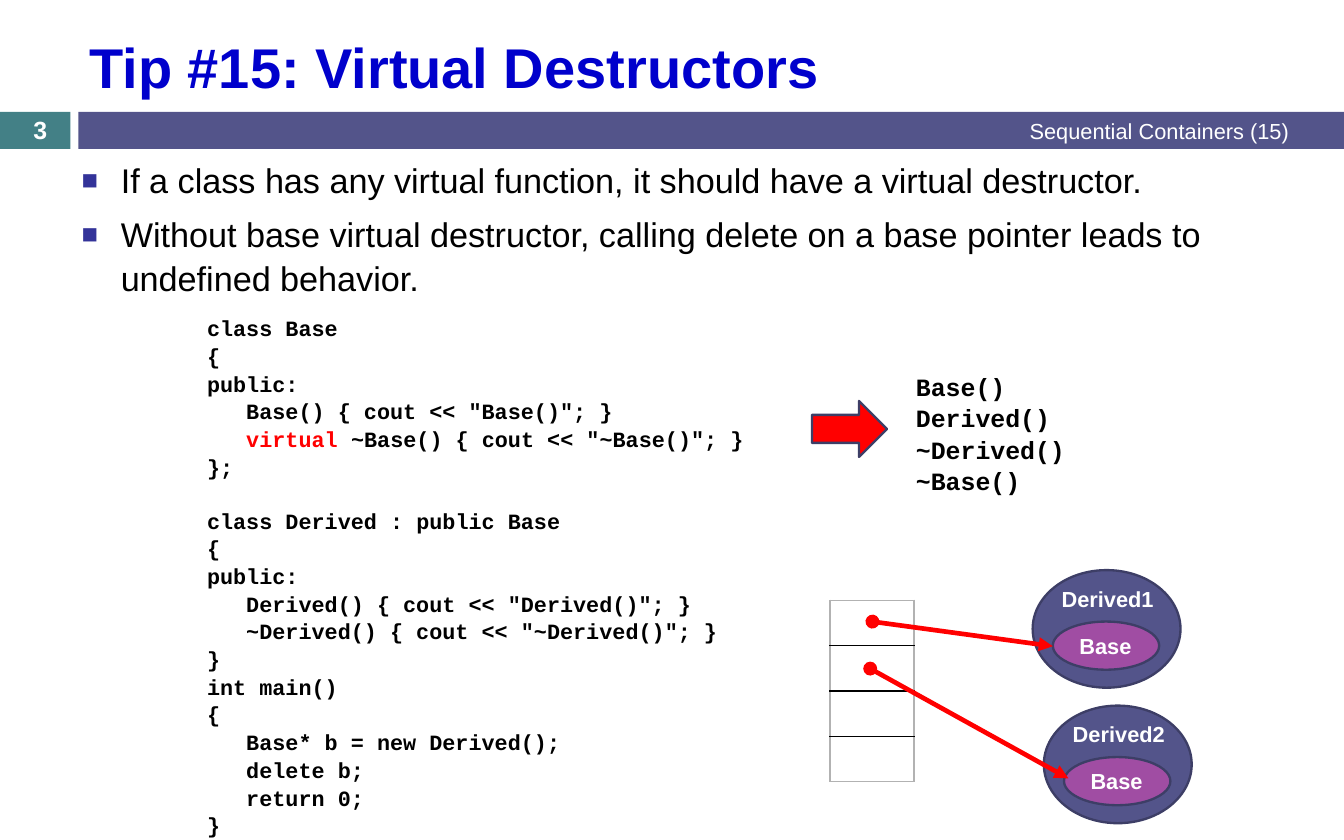
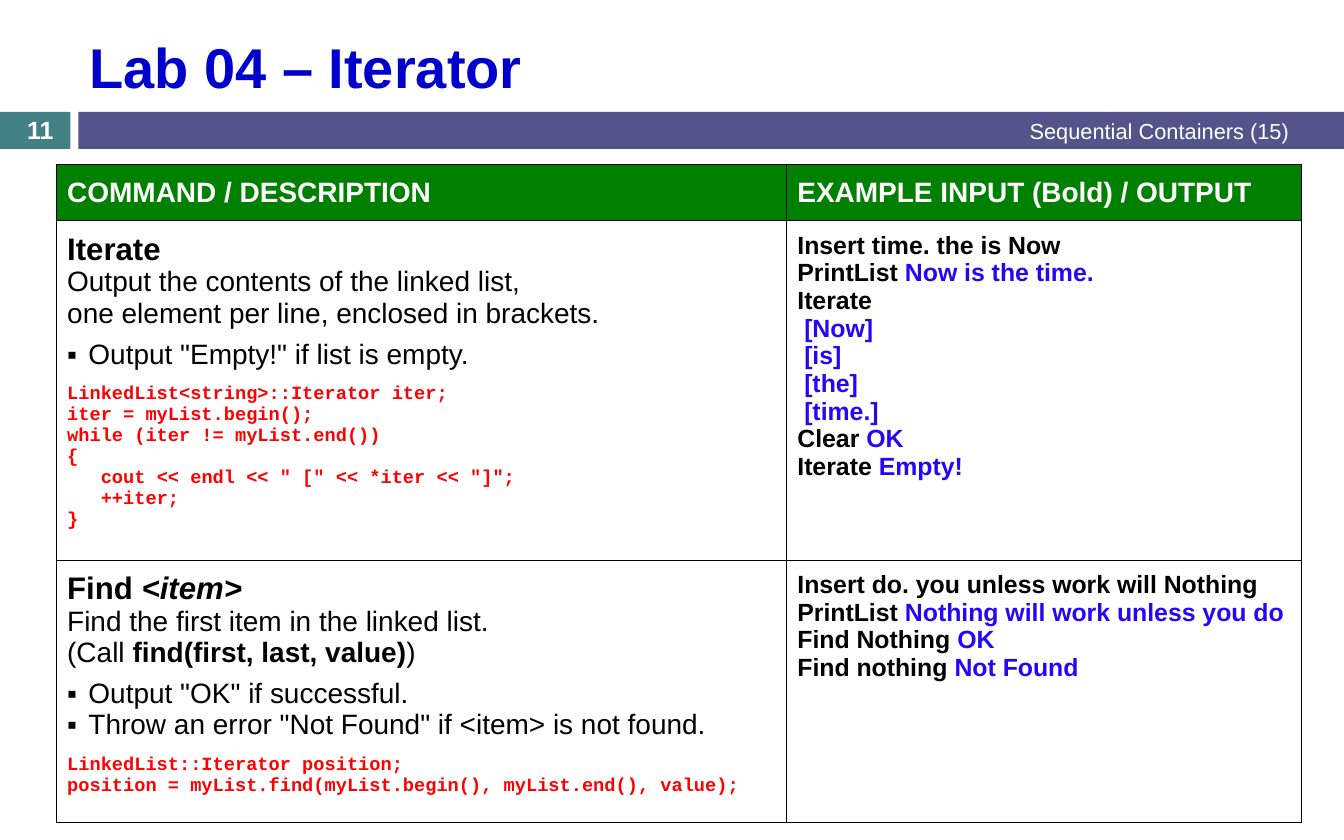
import pptx
import pptx.util
import pptx.dml.color
import pptx.enum.shapes
import pptx.enum.text
import pptx.oxml.ns
from lxml import etree

Inches, Pt = pptx.util.Inches, pptx.util.Pt
RGB = pptx.dml.color.RGBColor
SHAPE = pptx.enum.shapes.MSO_SHAPE
ALIGN = pptx.enum.text.PP_ALIGN
ANCHOR = pptx.enum.text.MSO_ANCHOR
qn = pptx.oxml.ns.qn

WHITE, BLACK = RGB(255, 255, 255), RGB(0, 0, 0)
TEAL, INDIGO = RGB(0x43, 0x80, 0x86), RGB(0x53, 0x54, 0x8A)
OUTLINE, PURPLE = RGB(0x3D, 0x3E, 0x66), RGB(0xA0, 0x4D, 0xA3)
TITLE_BLUE, BULLET_BLUE = RGB(0, 0, 0xCC), RGB(0x33, 0x33, 0x99)
OUTPUT_BLUE = RGB(0x24, 0x07, 0xF7)
RED, GREEN, GRAY = RGB(255, 0, 0), RGB(0, 0x80, 0), RGB(0xB2, 0xB2, 0xB2)
SANS, MONO = "Arial", "Courier New"

# ---- Content ----
FOOTER = "Sequential Containers (15)"

TIPS = [
    "If a class has any virtual function, it should have a virtual destructor.",
    "Without base virtual destructor, calling delete on a base pointer leads to undefined behavior.",
]
CLASS_CODE = """class Base
{
public:
   Base() { cout << "Base()"; }
   virtual ~Base() { cout << "~Base()"; }
};

class Derived : public Base
{
public:
   Derived() { cout << "Derived()"; }
   ~Derived() { cout << "~Derived()"; }
}
int main()
{
   Base* b = new Derived();
   delete b;
   return 0;
}"""
PROGRAM_OUTPUT = ["Base()", "Derived()", "~Derived()", "~Base()"]
# name, left and top of the object, start and end of its pointer
OBJECTS = [
    ("Derived1", 9.22, 5.09, (7.79, 5.55), (9.4, 5.77)),
    ("Derived2", 9.32, 6.3, (7.77, 5.97), (9.54, 6.95)),
]

HEADINGS = ["COMMAND / DESCRIPTION", "EXAMPLE INPUT (Bold) / OUTPUT"]
BOLD, COMMAND = {"bold": True}, {"bold": True, "size": 20}
ITERATE = {
    "summary": [("Iterate\n", COMMAND),
                "Output the contents of the linked list,\n"
                "one element per line, enclosed in brackets."],
    "rules": ['Output "Empty!" if list is empty.'],
    "code": """LinkedList<string>::Iterator iter;
iter = myList.begin();
while (iter != myList.end())
{
   cout << endl << " [" << *iter << "]";
   ++iter;
}""",
    "session": [("Insert time. the is Now", ""), ("PrintList ", "Now is the time."),
                ("Iterate", ""), ("", " [Now]"), ("", " [is]"), ("", " [the]"),
                ("", " [time.]"), ("Clear ", "OK"), ("Iterate ", "Empty!")],
}
FIND = {
    "summary": [("Find ", COMMAND), ("<item>\n", {**COMMAND, "italic": True}),
                "Find the first item in the linked list.\n(Call ",
                ("find(first, last, value)", BOLD), ")"],
    "rules": ['Output "OK" if successful.',
              'Throw an error "Not Found" if <item> is not found.'],
    "code": """LinkedList::Iterator position;
position = myList.find(myList.begin(), myList.end(), value);""",
    "session": [("Insert do. you unless work will Nothing", ""),
                ("PrintList ", "Nothing will work unless you do"),
                ("Find Nothing ", "OK"), ("Find nothing ", "Not Found")],
}


# ---- Text ----
def add_runs(paragraph, text, size=18, font=SANS, color=BLACK, bold=False, italic=False):
    for i, piece in enumerate(text.split("\n")):
        if i:
            paragraph.add_line_break()
        if piece:
            run = paragraph.add_run()
            run.text = piece
            run.font.size, run.font.name = Pt(size), font
            run.font.bold, run.font.italic = bold, italic
            run.font.color.rgb = color


def write(frame, paragraphs, align=ALIGN.LEFT, spacing=None, before=0, after=0,
          indent=0, bullet=None, bullet_color=BLACK, bullet_size=100, **run_format):
    """Add paragraphs: each is a string or a list of strings and (string, format) runs."""
    for runs in paragraphs:
        started = len(frame.paragraphs) > 1 or frame.paragraphs[0].runs
        paragraph = frame.add_paragraph() if started else frame.paragraphs[0]
        paragraph.alignment = align
        paragraph.space_before, paragraph.space_after = Pt(before), Pt(after)
        if spacing:
            paragraph.line_spacing = spacing
        properties = paragraph._p.get_or_add_pPr()
        properties.set("marL", str(Inches(indent)))
        properties.set("indent", str(-Inches(indent) if bullet else 0))
        if bullet:
            color = etree.SubElement(properties, qn("a:buClr"))
            etree.SubElement(color, qn("a:srgbClr"), val=str(bullet_color))
            etree.SubElement(properties, qn("a:buSzPct"), val=str(bullet_size * 1000))
            etree.SubElement(properties, qn("a:buFont"), typeface=SANS)
            etree.SubElement(properties, qn("a:buChar"), char=bullet)
        else:
            etree.SubElement(properties, qn("a:buNone"))
        for run in [runs] if isinstance(runs, str) else runs:
            text, changes = (run, {}) if isinstance(run, str) else run
            add_runs(paragraph, text, **{**run_format, **changes})


def write_code(frame, source, size, before=0, keyword=None, **fmt):
    """Write code lines; leading spaces become an indent, an empty line a gap."""
    for line in source.splitlines():
        text = line.lstrip()
        if not text:
            before = size * 1.2
            continue
        runs = [text]
        if keyword and text.startswith(keyword):
            runs = [(keyword, {"color": RED}), text[len(keyword):]]
        indent = (len(line) - len(text)) * 0.6 * size / 72
        write(frame, [runs], size=size, font=MONO, bold=True, before=before,
              indent=indent, **fmt)
        before = 0


def add_text(slide, box, paragraphs, anchor=ANCHOR.TOP, **fmt):
    frame = slide.shapes.add_textbox(*map(Inches, box)).text_frame
    frame.word_wrap, frame.vertical_anchor = True, anchor
    write(frame, paragraphs, **fmt)
    return frame


# ---- Shapes, pointers and tables ----
def add_shape(slide, kind, box, fill, line=None):
    shape = slide.shapes.add_shape(kind, *map(Inches, box))
    shape.shadow.inherit = False
    shape.fill.solid()
    shape.fill.fore_color.rgb = fill
    if line:
        shape.line.color.rgb, shape.line.width = line, Pt(1.5)
    else:
        shape.line.fill.background()


def add_pointer(slide, start, end):
    pointer = slide.shapes.add_connector(
        pptx.enum.shapes.MSO_CONNECTOR.STRAIGHT, *map(Inches, start + end))
    pointer.line.color.rgb, pointer.line.width = RED, Pt(3)
    line = pointer.line._get_or_add_ln()
    etree.SubElement(line, qn("a:headEnd"), type="oval")
    etree.SubElement(line, qn("a:tailEnd"), type="triangle")
    etree.SubElement(pointer._element.spPr, qn("a:effectLst"))


def set_borders(cell, width, **colors):
    properties = cell._tc.get_or_add_tcPr()
    for side in "LRTB":
        line = etree.SubElement(properties, qn("a:ln" + side), w=str(Pt(width)))
        fill = etree.SubElement(line, qn("a:solidFill"))
        etree.SubElement(fill, qn("a:srgbClr"), val=str(colors.get(side, BLACK)))


def add_table(slide, left, top, widths, heights):
    table = slide.shapes.add_table(
        len(heights), len(widths), Inches(left), Inches(top),
        Inches(sum(widths)), Inches(sum(heights))).table
    table.first_row = table.horz_banding = False
    for column, width in zip(table.columns, widths):
        column.width = Inches(width)
    for row, height in zip(table.rows, heights):
        row.height = Inches(height)
    return table


def add_slide(deck, title, number):
    slide = deck.slides.add_slide(deck.slide_layouts[6])
    add_shape(slide, SHAPE.RECTANGLE, (0, 1, 0.63, 0.33), TEAL)
    add_shape(slide, SHAPE.RECTANGLE, (0.7, 1, 11.3, 0.33), INDIGO)
    add_text(slide, (0.7, 0.19, 10.91, 0.8), [title], ANCHOR.MIDDLE,
             size=36, color=TITLE_BLUE, bold=True)
    add_text(slide, (4.5, 0.99, 7.11, 0.35), [FOOTER], ANCHOR.MIDDLE,
             size=14, color=WHITE, align=ALIGN.RIGHT)
    add_text(slide, (0, 1.01, 0.72, 0.3), [number], ANCHOR.MIDDLE,
             size=16, color=WHITE, bold=True, align=ALIGN.CENTER)
    return slide


# ---- Slides ----
def build_destructors(deck):
    slide = add_slide(deck, "Tip #15: Virtual Destructors", "3")
    add_text(slide, (0.63, 1.35, 10.99, 1.3), TIPS, size=22, before=7, spacing=1.06,
             indent=0.35, bullet="■", bullet_color=BULLET_BLUE, bullet_size=80)

    # Code and what it prints
    code = add_text(slide, (1.75, 2.75, 5.08, 4.58), [])
    write_code(code, CLASS_CODE, 14, keyword="virtual", spacing=1.06)
    add_text(slide, (8.08, 3.25, 2.25, 1.18), PROGRAM_OUTPUT, size=16, font=MONO,
             bold=True, spacing=1.06)
    add_shape(slide, SHAPE.RIGHT_ARROW, (7.25, 3.58, 0.67, 0.5), RED, OUTLINE)

    # Derived objects, each with its base part
    label = {"size": 14, "color": WHITE, "bold": True, "align": ALIGN.CENTER}
    for name, left, top, _, _ in OBJECTS:
        add_shape(slide, SHAPE.OVAL, (left, top, 1.32, 1.05), INDIGO, OUTLINE)
        add_text(slide, (left, top + 0.09, 1.34, 0.34), [name], **label)
        add_shape(slide, SHAPE.OVAL, (left + 0.18, top + 0.46, 0.95, 0.43), PURPLE, OUTLINE)
        add_text(slide, (left - 0.02, top + 0.51, 1.34, 0.34), ["Base"], **label)

    # Array of pointers
    slots = add_table(slide, 7.41, 5.36, [0.75], [0.405] * 4)
    last = len(slots.rows) - 1
    for i in range(last + 1):
        cell = slots.cell(i, 0)
        set_borders(cell, 1, L=GRAY, R=GRAY, T=BLACK if i else GRAY,
                    B=BLACK if i < last else GRAY)
        cell.fill.background()
    for _, _, _, start, end in OBJECTS:
        add_pointer(slide, start, end)


def style_cell(cell, fill):
    set_borders(cell, 0.3)
    cell.fill.solid()
    cell.fill.fore_color.rgb = fill
    cell.margin_left = cell.margin_right = Inches(0.1)
    cell.margin_top = cell.margin_bottom = Inches(0.1)
    return cell.text_frame


def fill_command(table, row, command):
    description = style_cell(table.cell(row, 0), WHITE)
    write(description, [command["summary"]], after=6)
    write(description, command["rules"], indent=0.19, bullet="▪")
    write_code(description, command["code"], 12, before=9, color=RED)
    session = [[(typed, {}), (reply, {"color": OUTPUT_BLUE})]
               for typed, reply in command["session"]]
    write(style_cell(table.cell(row, 1), WHITE), session, size=16, bold=True)


def build_lab(deck):
    slide = add_slide(deck, "Lab 04 – Iterator", "11")
    widths = [6.52, 4.6]
    iterate = add_table(slide, 0.5, 1.47, widths, [0.48, 2.87])
    for column, heading in enumerate(HEADINGS):
        cell = iterate.cell(0, column)
        write(style_cell(cell, GREEN), [heading], color=WHITE, bold=True)
        cell.vertical_anchor = ANCHOR.MIDDLE
    fill_command(iterate, 1, ITERATE)
    fill_command(add_table(slide, 0.5, 5, widths, [2.21]), 0, FIND)


def main():
    deck = pptx.Presentation()
    deck.slide_width, deck.slide_height = Inches(12), Inches(7.5)
    build_destructors(deck)
    build_lab(deck)
    deck.save("out.pptx")


if __name__ == "__main__":
    main()
